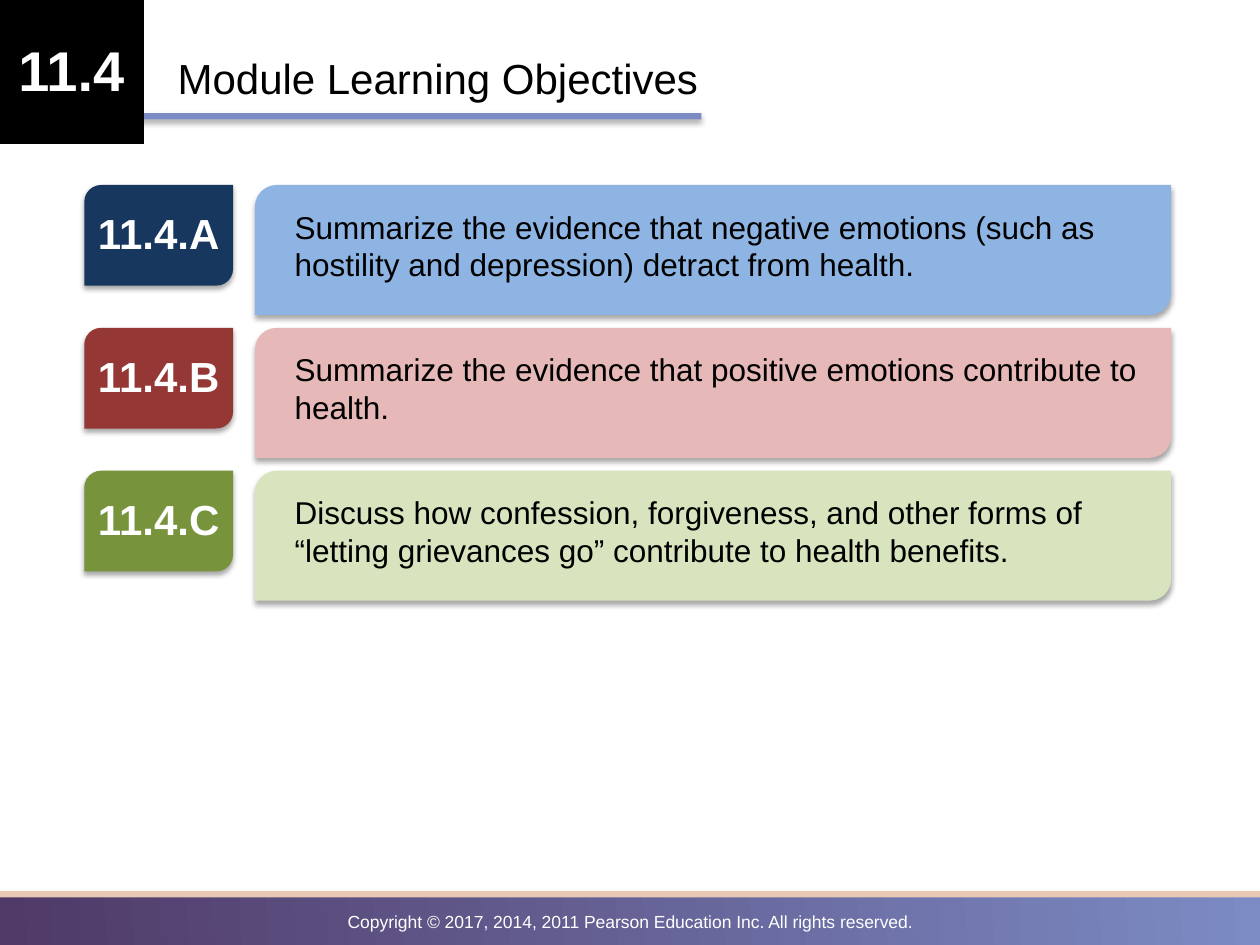
import lxml.etree
import pptx
import pptx.dml.color
import pptx.enum.shapes
import pptx.enum.text
import pptx.oxml.ns
import pptx.util

Cm = pptx.util.Cm
Pt = pptx.util.Pt
RGBColor = pptx.dml.color.RGBColor
SHAPES = pptx.enum.shapes.MSO_SHAPE
ALIGN = pptx.enum.text.PP_ALIGN
qn = pptx.oxml.ns.qn

BLACK = RGBColor(0x00, 0x00, 0x00)
WHITE = RGBColor(0xFF, 0xFF, 0xFF)
PERIWINKLE = RGBColor(0x7C, 0x8B, 0xC4)
PLUM = RGBColor(0x4F, 0x39, 0x67)
SAND = RGBColor(0xE7, 0xC8, 0xB3)
NAVY = RGBColor(0x17, 0x37, 0x5E)
SKY = RGBColor(0x8E, 0xB4, 0xE3)
BRICK = RGBColor(0x95, 0x37, 0x35)
ROSE = RGBColor(0xE6, 0xB9, 0xB8)
OLIVE = RGBColor(0x77, 0x93, 0x3C)
LIME = RGBColor(0xD7, 0xE4, 0xBD)

OBJECTIVES = [
    ("11.4.A", NAVY, SKY,
     "Summarize the evidence that negative emotions (such as hostility and "
     "depression) detract from health."),
    ("11.4.B", BRICK, ROSE,
     "Summarize the evidence that positive emotions contribute to health."),
    ("11.4.C", OLIVE, LIME,
     "Discuss how confession, forgiveness, and other forms of “letting "
     "grievances go” contribute to health benefits."),
]
FIRST_TOP = 3.73
ROW_PITCH = 2.88
TEXT_DROP = 0.33


class ObjectivesSlide:
    font_name = "Arial"

    def __init__(self, page):
        self.page = page

    def panel(self, left, top, width, height, color,
              kind=SHAPES.RECTANGLE, shadow=False):
        shape = self.page.shapes.add_shape(
            kind, Cm(left), Cm(top), Cm(width), Cm(height))
        shape.fill.solid()
        shape.fill.fore_color.rgb = color
        shape.line.fill.background()
        shape.shadow.inherit = False
        if shadow:
            self.cast_shadow(shape)
        return shape

    def cast_shadow(self, shape):
        effects = shape._element.spPr.find(qn("a:effectLst"))
        outer = lxml.etree.SubElement(
            effects, qn("a:outerShdw"), blurRad="40000", dist="23000",
            dir="5400000", rotWithShape="0")
        color = lxml.etree.SubElement(outer, qn("a:srgbClr"), val=str(BLACK))
        lxml.etree.SubElement(color, qn("a:alpha"), val="35000")

    def gradient_band(self, left, top, width, height, start, end):
        band = self.panel(left, top, width, height, start)
        band.fill.gradient()
        band.fill.gradient_angle = 4
        for stop, color in zip(band.fill.gradient_stops, (start, end)):
            stop.color.rgb = color

    def text(self, left, top, width, height, words, size, color=BLACK,
             bold=False, centered=False):
        box = self.page.shapes.add_textbox(
            Cm(left), Cm(top), Cm(width), Cm(height))
        frame = box.text_frame
        frame.word_wrap = True
        para = frame.paragraphs[0]
        if centered:
            frame.margin_left = frame.margin_right = 0
            para.alignment = ALIGN.CENTER
        span = para.add_run()
        span.text = words
        span.font.name = self.font_name
        span.font.size = Pt(size)
        span.font.bold = bold
        span.font.color.rgb = color

    def objective(self, top, label, dark, light, words):
        rounded = SHAPES.ROUND_2_DIAG_RECTANGLE
        self.panel(1.7, top, 3, 2.03, dark, rounded, shadow=True)
        self.text(1.7, top + TEXT_DROP, 3, 1.28, label, 24, WHITE,
                  bold=True, centered=True)
        self.panel(5.14, top, 18.47, 2.62, light, rounded, shadow=True)
        self.text(5.69, top + TEXT_DROP, 17.75, 1.8, words, 18)


def main():
    deck = pptx.Presentation()
    deck.slide_width = Cm(25.4)
    deck.slide_height = Cm(19.05)
    slide = ObjectivesSlide(deck.slides.add_slide(deck.slide_layouts[6]))

    slide.gradient_band(0, 17.98, 25.4, 1.14, PLUM, PERIWINKLE)
    slide.panel(0, 17.96, 25.53, 0.13, SAND)
    slide.text(0, 18.24, 25.4, 0.68,
               "Copyright © 2017, 2014, 2011 Pearson Education Inc. "
               "All rights reserved.", 10, WHITE, centered=True)

    slide.panel(-0.5, 2.28, 14.64, 0.13, PERIWINKLE, shadow=True)
    slide.panel(-0.02, -0.02, 2.92, 2.92, BLACK)
    slide.text(-0.02, 0.6, 2.92, 1.62, "11.4", 32, WHITE,
               bold=True, centered=True)
    slide.text(3.33, 0.93, 19.58, 1.28, "Module Learning Objectives", 24)

    for row, (label, dark, light, words) in enumerate(OBJECTIVES):
        slide.objective(FIRST_TOP + row * ROW_PITCH, label, dark, light, words)

    deck.save("out.pptx")


if __name__ == "__main__":
    main()
